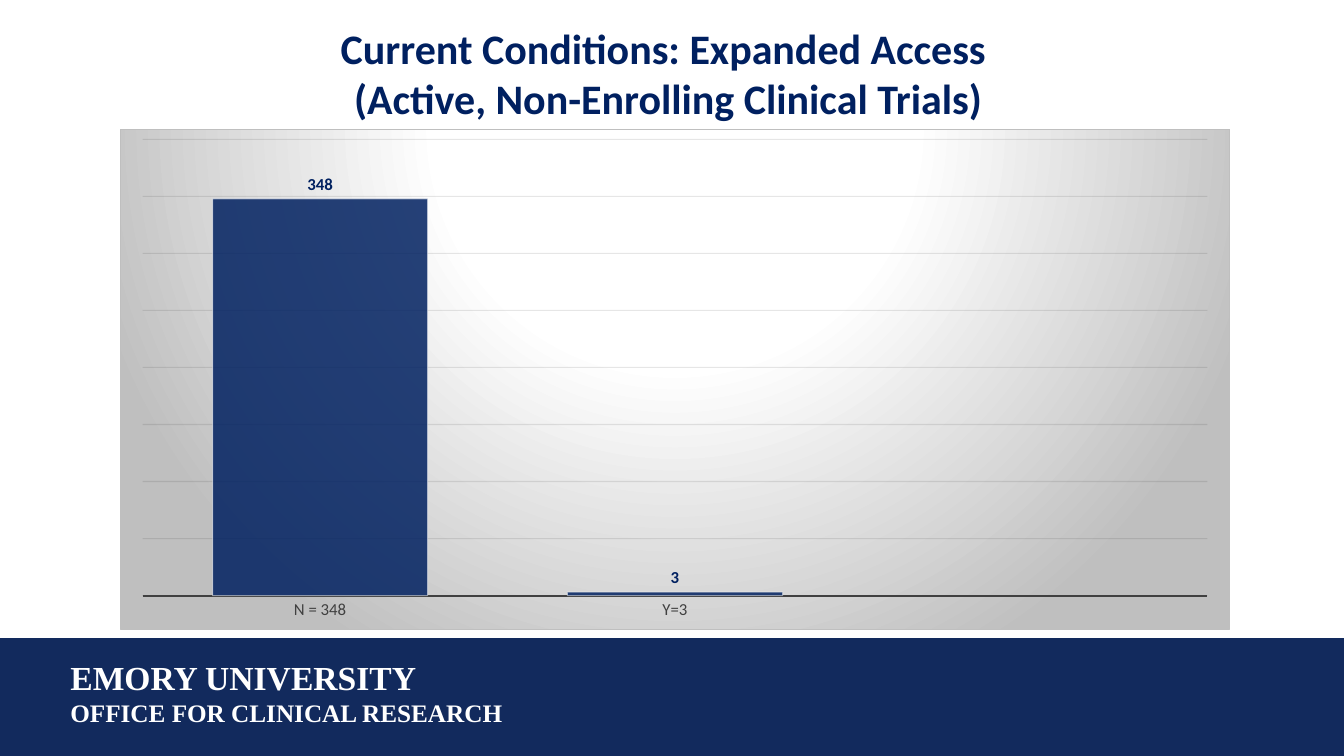
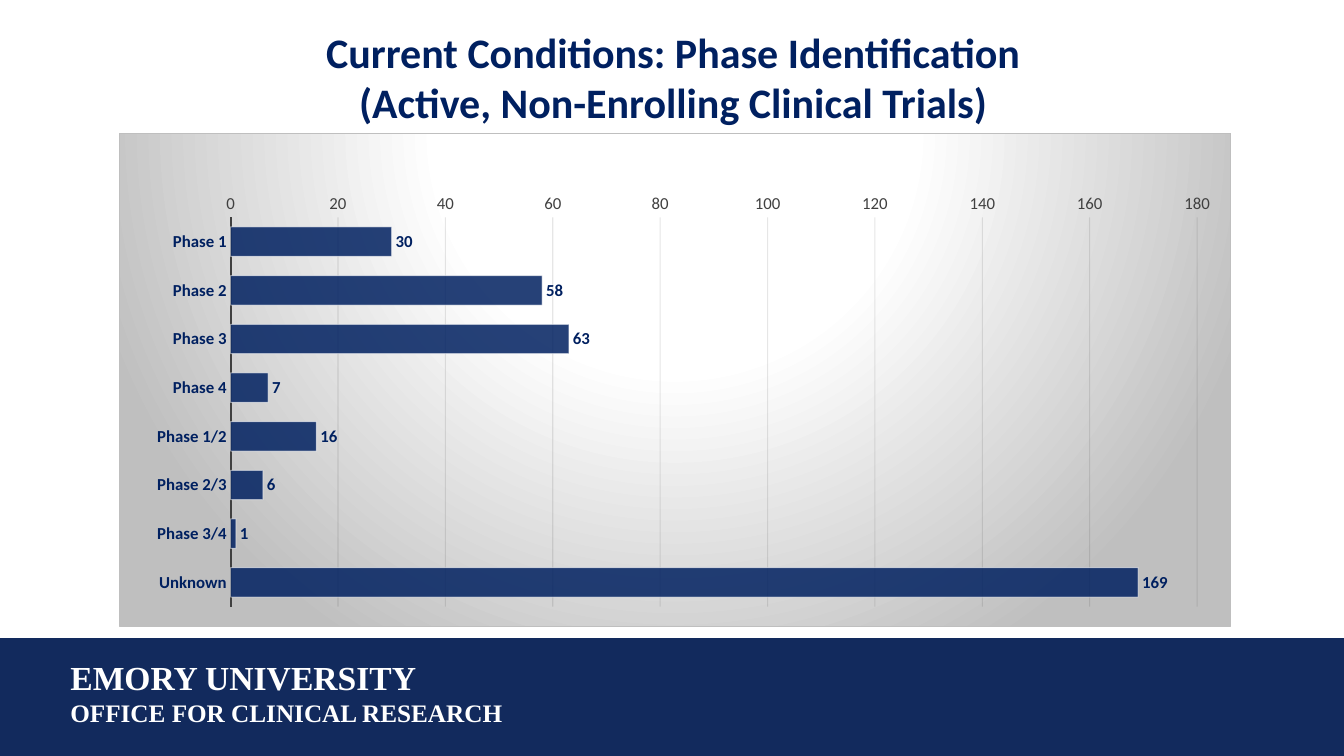
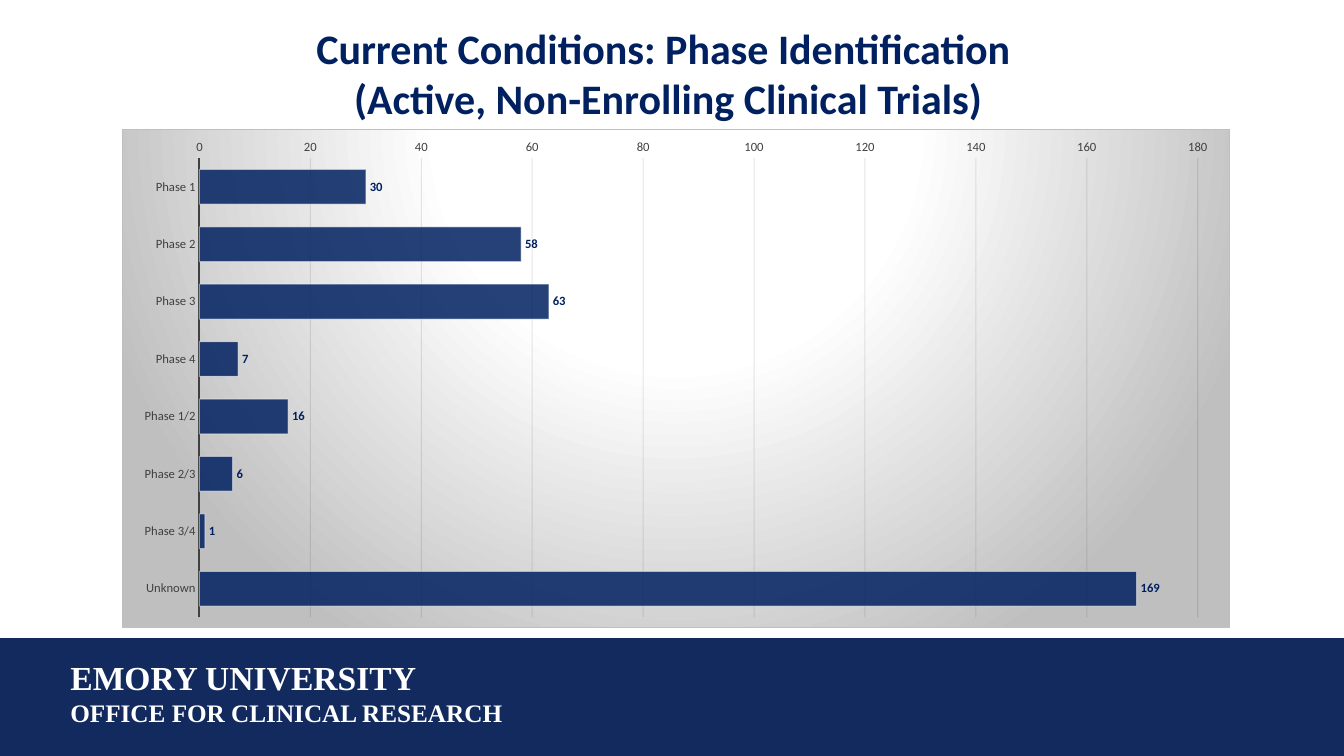
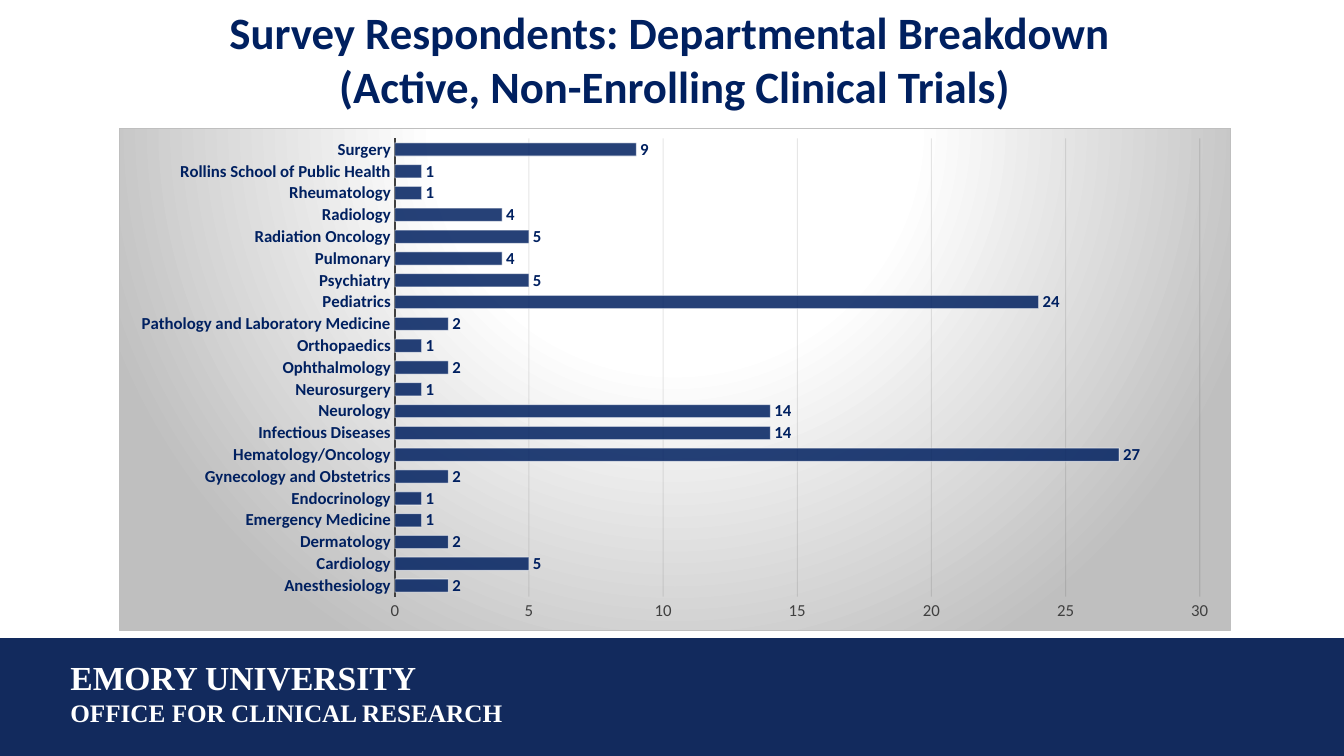
from pptx import Presentation
from pptx.chart.data import CategoryChartData
from pptx.dml.color import RGBColor
from pptx.enum.chart import XL_CHART_TYPE, XL_LABEL_POSITION, XL_TICK_MARK
from pptx.enum.shapes import MSO_SHAPE
from pptx.enum.text import MSO_AUTO_SIZE, PP_ALIGN
from pptx.oxml import parse_xml
from pptx.oxml.ns import nsdecls, qn
from pptx.util import Inches, Pt

# Shared style
NAVY = RGBColor(0x00, 0x20, 0x60)
BAND_BLUE = RGBColor(0x12, 0x2A, 0x5D)
WHITE = RGBColor(0xFF, 0xFF, 0xFF)
BLACK = RGBColor(0x00, 0x00, 0x00)
DARK_GREY = RGBColor(0x40, 0x40, 0x40)
GRID_BLACK = RGBColor(0x0D, 0x0D, 0x0D)
PANEL_GREY = RGBColor(0xBF, 0xBF, 0xBF)
BODY_FONT = "Calibri"
FOOTER_FONT = "Times New Roman"

SLIDE_W, SLIDE_H = 13.33, 7.5
BAND_TOP = 6.33
FOOTER_BOX = (0.6, 6.47, 6.67, 0.81)
FOOTER = [("EMORY UNIVERSITY", 24), ("OFFICE FOR CLINICAL RESEARCH", 18)]

# Content
TRIALS = "(Active, Non-Enrolling Clinical Trials)"
PHASES = [("Phase 1", 30), ("Phase 2", 58), ("Phase 3", 63), ("Phase 4", 7),
          ("Phase 1/2", 16), ("Phase 2/3", 6), ("Phase 3/4", 1), ("Unknown", 169)]
DEPARTMENTS = [
    ("Anesthesiology", 2), ("Cardiology", 5), ("Dermatology", 2),
    ("Emergency Medicine", 1), ("Endocrinology", 1),
    ("Gynecology and Obstetrics", 2), ("Hematology/Oncology", 27),
    ("Infectious Diseases", 14), ("Neurology", 14), ("Neurosurgery", 1),
    ("Ophthalmology", 2), ("Orthopaedics", 1),
    ("Pathology and Laboratory Medicine", 2), ("Pediatrics", 24),
    ("Psychiatry", 5), ("Pulmonary", 4), ("Radiation Oncology", 5),
    ("Radiology", 4), ("Rheumatology", 1),
    ("Rollins School of Public Health", 1), ("Surgery", 9),
]

SLIDES = [
    dict(title="Current Conditions: Expanded Access ", title_box=(1.63, 0.17, 10, 1.11),
         chart_box=(1.19, 1.28, 11.01, 4.97), columns=True,
         data=[("N = 348", 348), ("Y=3", 3), ("", None)]),
    dict(title="Current Conditions: Phase Identification", title_box=(1.65, 0.21, 10.06, 1.11),
         chart_box=(1.18, 1.32, 11.03, 4.9), data=PHASES, top_down=True,
         bold_names=True, plot_area=(0.1, 0.17, 0.87, 0.79)),
    dict(title="Current Conditions: Phase Identification ", title_box=(1.63, 0.17, 10, 1.11),
         chart_box=(1.21, 1.28, 10.99, 4.95), data=PHASES, top_down=True, label_size=9),
    dict(title="Survey Respondents: Departmental Breakdown ", title_box=(1.18, 0, 11.03, 1.48),
         title_size=32, chart_box=(1.18, 1.27, 11.03, 4.99), data=DEPARTMENTS,
         bold_names=True),
]


def inches(box):
    return [Inches(length) for length in box]


def style(font, size, color, bold=False, name=BODY_FONT):
    font.name, font.size, font.bold = name, Pt(size), bold
    font.color.rgb = color


def add_lines(slide, box, lines, color, name, align):
    """Text box with one bold paragraph per (text, size) pair."""
    frame = slide.shapes.add_textbox(*inches(box)).text_frame
    frame.word_wrap = True
    frame.auto_size = MSO_AUTO_SIZE.SHAPE_TO_FIT_TEXT
    for i, (text, size) in enumerate(lines):
        paragraph = frame.paragraphs[0] if i == 0 else frame.add_paragraph()
        paragraph.text = text
        paragraph.alignment = align
        style(paragraph.font, size, color, True, name)


def add_band(slide):
    band = slide.shapes.add_shape(
        MSO_SHAPE.RECTANGLE, *inches((0, BAND_TOP, SLIDE_W, SLIDE_H - BAND_TOP)))
    band.shadow.inherit = False
    band.fill.solid()
    band.fill.fore_color.rgb = BAND_BLUE
    band.line.fill.background()


def set_line(chart_format, color, width):
    chart_format.line.color.rgb = color
    chart_format.line.width = Pt(width)


def set_opacity(chart_format, *percents):
    """Give the colours of a chart part, in order, an opacity."""
    colors = chart_format._element.spPr.iter(qn("a:srgbClr"))
    for color, percent in zip(colors, percents):
        color.append(parse_xml(f'<a:alpha {nsdecls("a")} val="{percent * 1000}"/>'))


def fill_panel(chart):
    """Circular white to grey gradient and thin border behind the chart."""
    stops = "".join(
        f'<a:gs pos="{share * 1000}"><a:srgbClr val="{color}"/></a:gs>'
        for share, color in [(0, WHITE), (39, WHITE), (100, PANEL_GREY)])
    chart.element.find(qn("c:chart")).addnext(parse_xml(
        f'<c:spPr {nsdecls("c", "a")}><a:gradFill>'
        f'<a:gsLst>{stops}</a:gsLst><a:path path="circle">'
        '<a:fillToRect l="50000" t="-80000" r="50000" b="180000"/></a:path></a:gradFill>'
        f'<a:ln w="{Pt(0.75)}"><a:solidFill><a:srgbClr val="{PANEL_GREY}"/></a:solidFill></a:ln>'
        '</c:spPr>'))


def place_plot(chart, shares):
    plot_area = chart.element.find(qn("c:chart")).find(qn("c:plotArea"))
    for layout in plot_area.findall(qn("c:layout")):
        plot_area.remove(layout)
    modes = '<c:xMode val="edge"/><c:yMode val="edge"/>'
    sizes = "".join(f'<c:{side} val="{share}"/>' for side, share in zip("xywh", shares))
    plot_area.insert(0, parse_xml(
        f'<c:layout {nsdecls("c")}><c:manualLayout><c:layoutTarget val="inner"/>'
        f'{modes}{sizes}</c:manualLayout></c:layout>'))


def add_bars(slide, chart_box, data, columns=False, top_down=False,
             bold_names=False, label_size=12, plot_area=None):
    chart_data = CategoryChartData()
    chart_data.categories = [name for name, _ in data]
    chart_data.add_series("Series 1", [count for _, count in data])
    kind = XL_CHART_TYPE.COLUMN_CLUSTERED if columns else XL_CHART_TYPE.BAR_CLUSTERED
    chart = slide.shapes.add_chart(kind, *inches(chart_box), chart_data).chart
    chart.has_title = chart.has_legend = False
    fill_panel(chart)
    style(chart.font, 10, BLACK)
    if plot_area:
        place_plot(chart, plot_area)

    # Axes
    names, counts = chart.category_axis, chart.value_axis
    for axis in (names, counts):
        axis.major_tick_mark = axis.minor_tick_mark = XL_TICK_MARK.NONE
    style(names.tick_labels.font, label_size, NAVY if bold_names else DARK_GREY, bold_names)
    set_line(names.format, DARK_GREY, 1.5)
    names.reverse_order = top_down
    style(counts.tick_labels.font, label_size, DARK_GREY)
    counts.format.line.fill.background()
    counts.visible = not columns
    counts.has_major_gridlines = True
    set_line(counts.major_gridlines.format, GRID_BLACK, 0.75)
    set_opacity(counts.major_gridlines.format, 10)

    # Bars and their values
    plot = chart.plots[0]
    plot.gap_width = 65
    plot.vary_by_categories = False
    bars = plot.series[0]
    bars.format.fill.solid()
    bars.format.fill.fore_color.rgb = NAVY
    set_line(bars.format, WHITE, 0.75)
    set_opacity(bars.format, 85, 50)
    values = bars.data_labels
    values.show_value = True
    values.position = XL_LABEL_POSITION.OUTSIDE_END
    style(values.font, label_size, NAVY, True)


def add_slide(deck, title, title_box, title_size=30, **bars):
    slide = deck.slides.add_slide(deck.slide_layouts[6])
    add_band(slide)
    add_lines(slide, title_box, [(title, title_size), (TRIALS, title_size)],
              NAVY, BODY_FONT, PP_ALIGN.CENTER)
    add_bars(slide, **bars)
    add_lines(slide, FOOTER_BOX, FOOTER, WHITE, FOOTER_FONT, PP_ALIGN.LEFT)


def main():
    deck = Presentation()
    deck.slide_width, deck.slide_height = Inches(SLIDE_W), Inches(SLIDE_H)
    for content in SLIDES:
        add_slide(deck, **content)
    deck.save("out.pptx")


if __name__ == "__main__":
    main()
